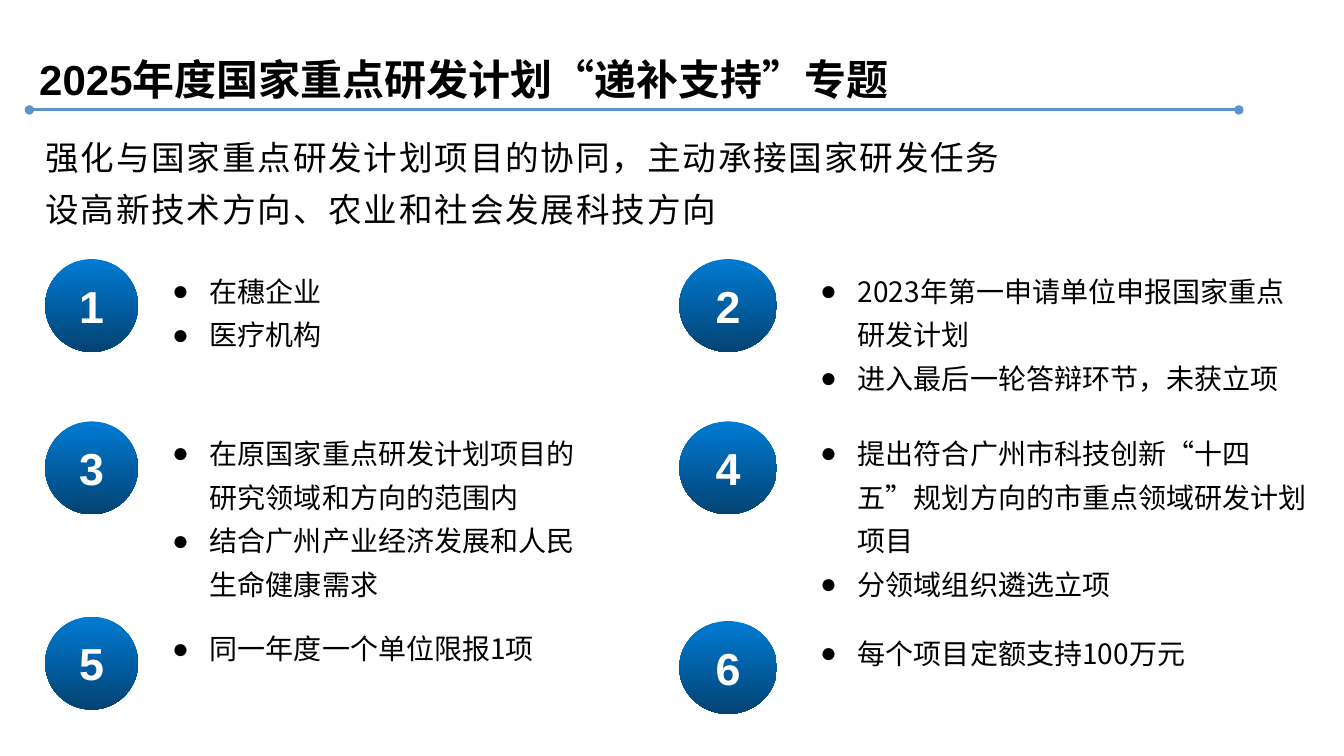
from lxml import etree
from pptx import Presentation
from pptx.dml.color import RGBColor
from pptx.enum.lang import MSO_LANGUAGE_ID
from pptx.enum.shapes import MSO_CONNECTOR, MSO_SHAPE
from pptx.enum.text import MSO_ANCHOR, MSO_AUTO_SIZE, PP_ALIGN
from pptx.oxml.ns import qn
from pptx.util import Cm, Pt

STRAIGHT = MSO_CONNECTOR.STRAIGHT
OVAL = MSO_SHAPE.OVAL
MIDDLE = MSO_ANCHOR.MIDDLE
CENTER = PP_ALIGN.CENTER
GROW = MSO_AUTO_SIZE.SHAPE_TO_FIT_TEXT
CHINESE = MSO_LANGUAGE_ID.SIMPLIFIED_CHINESE

COLORS = {
    "rule": "5B94CE",
    "badge_top": "007BD3",
    "badge_bottom": "034373",
    "text": "000000",
    "number": "FFFFFF",
}
LATIN = "Arial"
HAN = "Noto Sans CJK SC"


def style_span(span, font, size, color, bold=False):
    span.font.name = font
    span.font.size = Pt(size)
    span.font.bold = bold
    span.font.color.rgb = RGBColor.from_string(COLORS[color])
    span.font.language_id = CHINESE
    etree.SubElement(span.font._element, qn("a:ea"), typeface=HAN)


def add_text(left, top, width, height, lines, font, size, spacing, bold=False):
    box = page.shapes.add_textbox(Cm(left), Cm(top), Cm(width), Cm(height))
    frame = box.text_frame
    frame.word_wrap = True
    frame.auto_size = GROW
    frame.text = "\n".join(lines)
    for para in frame.paragraphs:
        para.line_spacing = spacing
        style_span(para.runs[0], font, size, "text", bold)
    return frame.paragraphs


deck = Presentation()
deck.slide_width = Cm(33.87)
deck.slide_height = Cm(19.05)
page = deck.slides.add_slide(deck.slide_layouts[6])

rule = page.shapes.add_connector(STRAIGHT, Cm(0.74), Cm(2.77), Cm(31.22), Cm(2.77))
rule.line.color.rgb = RGBColor.from_string(COLORS["rule"])
rule.line.width = Pt(2.25)
for end in ("a:headEnd", "a:tailEnd"):
    etree.SubElement(rule.line._get_or_add_ln(), qn(end), type="oval")
etree.SubElement(rule._element.spPr, qn("a:effectLst"))

add_text(0.74, 0.58, 27.15, 2.18, ["2025年度国家重点研发计划“递补支持”专题"], LATIN, 30, 1.5, True)

summary = add_text(0.89, 3.02, 29.85, 2.92, [
    "强化与国家重点研发计划项目的协同，主动承接国家研发任务",
    "设高新技术方向、农业和社会发展科技方向",
], HAN, 24, 1.3)
for para in summary:
    para.runs[0].font._element.set("spc", "130")

COLUMNS = [
    {"badge_left": 1.14, "badge_width": 2.34, "text_left": 4.09},
    {"badge_left": 17.12, "badge_width": 2.46, "text_left": 20.42},
]
BADGE_HEIGHT = 2.34

items = [
    (6.53, 12.85, 2.46, ["在穗企业", "医疗机构"]),
    (6.53, 12.8, 3.58, ["2023年第一申请单位申报国家重点研发计划", "进入最后一轮答辩环节，未获立项"]),
    (10.62, 10.74, 4.7, ["在原国家重点研发计划项目的研究领域和方向的范围内",
                         "结合广州产业经济发展和人民生命健康需求"]),
    (10.62, 12.8, 3.58, ["提出符合广州市科技创新“十四五”规划方向的市重点领域研发计划项目",
                         "分领域组织遴选立项"]),
    (15.54, 11.84, 1.37, ["同一年度一个单位限报1项"]),
    (15.65, 12.8, 1.37, ["每个项目定额支持100万元"]),
]

for index, (top, width, height, lines) in enumerate(items):
    column = COLUMNS[index % 2]
    badge = page.shapes.add_shape(
        OVAL, Cm(column["badge_left"]), Cm(top), Cm(column["badge_width"]), Cm(BADGE_HEIGHT))
    badge.shadow.inherit = False
    badge.line.fill.background()
    badge.fill.gradient()
    badge.fill.gradient_angle = 270
    for stop, position, color in zip(badge.fill.gradient_stops, (0, 1), ("badge_top", "badge_bottom")):
        stop.position = position
        stop.color.rgb = RGBColor.from_string(COLORS[color])
    badge.text_frame.text = str(index + 1)
    badge.text_frame.vertical_anchor = MIDDLE
    number = badge.text_frame.paragraphs[0]
    number.alignment = CENTER
    style_span(number.runs[0], LATIN, 32, "number", True)

    for para in add_text(column["text_left"], top, width, height, lines, HAN, 20, 1.3):
        properties = para._p.get_or_add_pPr()
        properties.set("marL", str(Cm(0.95)))
        properties.set("indent", str(-Cm(0.95)))
        etree.SubElement(properties, qn("a:buFont"), typeface=LATIN)
        etree.SubElement(properties, qn("a:buChar"), char="●")

deck.save("out.pptx")
